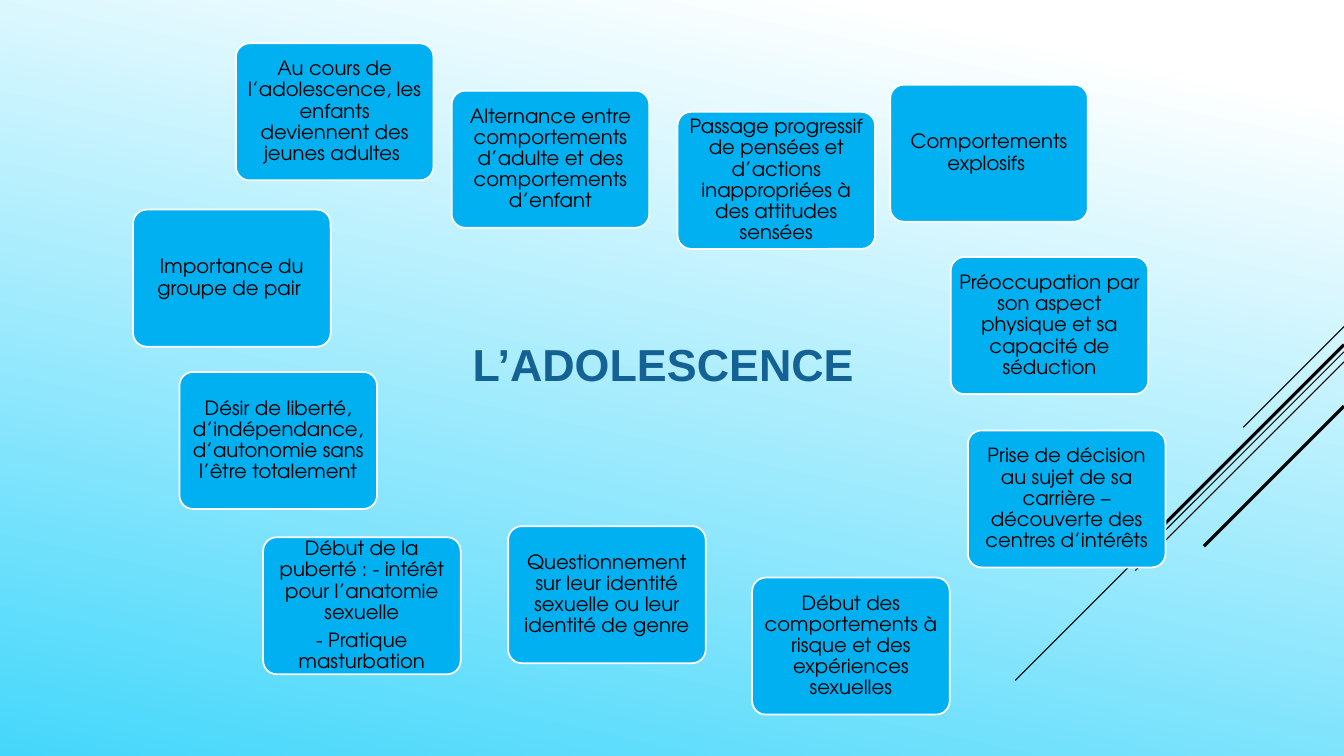
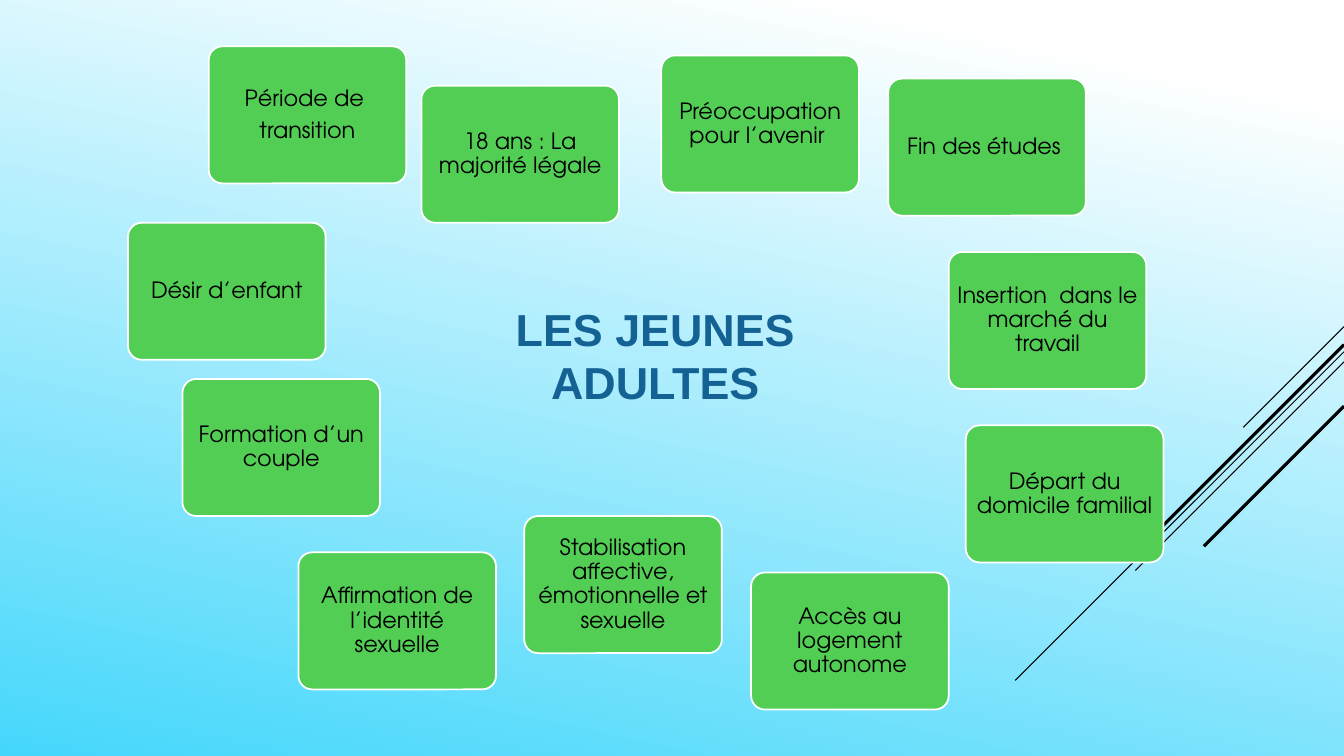
from lxml import etree
from pptx import Presentation
from pptx.dml.color import RGBColor
from pptx.enum.shapes import MSO_CONNECTOR, MSO_SHAPE
from pptx.enum.text import MSO_ANCHOR, PP_ALIGN
from pptx.oxml.ns import qn
from pptx.util import Inches, Pt

LINE = MSO_CONNECTOR.STRAIGHT
ROUND = MSO_SHAPE.ROUNDED_RECTANGLE
MIDDLE, TOP = MSO_ANCHOR.MIDDLE, MSO_ANCHOR.TOP
CENTER = PP_ALIGN.CENTER

COLORS = {
    "white": "FFFFFF",
    "sky": "45D7FB",
    "black": "000000",
    "title": "146194",
    "blue": "00B0F0",
    "green": "52CE55",
}
CARD_W, CARD_H = 1.96, 1.36
TITLE_W = 5.14
EDGE = 13.33

RAYS = [
    (3.24, 1, 0.75),
    (3.49, 3.26, 0.75),
    (3.59, 2.07, 0.75),
    (3.42, 1.91, 2.25),
    (4.03, 1.39, 2.25),
]

SLIDES = [
    {
        "title": "L’ADOLESCENCE", "place": (4.01, 3.29, 0.64),
        "fill": "blue", "size": 14,
        "cards": [
            (2.34, 0.43, "Au cours de l’adolescence, les enfants deviennent des jeunes adultes "),
            (4.48, 0.9, "Alternance entre comportements d’adulte et des comportements d’enfant"),
            (6.72, 1.11, "Passage progressif de pensées et d’actions inappropriées à des attitudes sensées"),
            (8.83, 0.84, "Comportements explosifs "),
            (9.43, 2.55, "Préoccupation par son aspect physique et sa capacité de séduction"),
            (9.6, 4.27, "Prise de décision au sujet de sa carrière –découverte des centres d’intérêts"),
            (7.46, 5.73, "Début des comportements à risque et des expériences sexuelles"),
            (5.04, 5.22, "Questionnement sur leur identité sexuelle ou leur identité de genre"),
            (2.61, 5.33, "Début de la puberté : - intérêt pour l’anatomie sexuelle\n- Pratique masturbation"),
            (1.78, 3.69, "Désir de liberté, d’indépendance, d’autonomie sans l’être totalement"),
            (1.32, 2.08, "Importance du groupe de pair "),
        ],
    },
    {
        "title": "LES JEUNES ADULTES", "place": (3.93, 2.94, 1.18),
        "fill": "green", "size": 16,
        "cards": [
            (2.07, 0.46, "Période de \ntransition"),
            (4.18, 0.85, "18 ans : La majorité légale"),
            (6.56, 0.55, "Préoccupation pour l’avenir "),
            (8.81, 0.78, "Fin des études "),
            (9.41, 2.5, "Insertion  dans le marché du travail"),
            (9.58, 4.22, "Départ du domicile familial"),
            (7.45, 5.68, "Accès au logement autonome"),
            (5.2, 5.12, "Stabilisation affective, émotionnelle et sexuelle"),
            (2.96, 5.48, "Affirmation de l’identité sexuelle"),
            (1.81, 3.76, "Formation d’un couple"),
            (1.27, 2.21, "Désir d’enfant"),
        ],
    },
]


def color(name):
    return RGBColor.from_string(COLORS[name])


def write(shape, text, size, font="TeX Gyre Adventor", ink="black", bold=False,
          anchor=MIDDLE, pad=(0.03, 0.03), lead=0.9, after=0):
    frame = shape.text_frame
    frame.word_wrap = True
    frame.vertical_anchor = anchor
    frame.margin_left = frame.margin_right = Inches(pad[0])
    frame.margin_top = frame.margin_bottom = Inches(pad[1])
    frame.text = text
    for para in frame.paragraphs:
        para.alignment = CENTER
        para.line_spacing = lead
        para.space_after = Pt(after)
        para.font.name = font
        para.font.size = Pt(size)
        para.font.bold = bold
        para.font.color.rgb = color(ink)


prs = Presentation()
prs.slide_width, prs.slide_height = Inches(EDGE), Inches(7.5)

back = prs.slide_master.background.fill
back.gradient()
back.gradient_angle = 258
for stop, (name, pos) in zip(back.gradient_stops, [("white", 0.1), ("sky", 1)]):
    stop.color.rgb = color(name)
    stop.position = pos

for page in SLIDES:
    slide = prs.slides.add_slide(prs.slide_layouts[6])
    shapes = slide.shapes

    for top, run, width in RAYS:
        ray = shapes.add_connector(LINE, Inches(EDGE), Inches(top),
                                   Inches(EDGE - run), Inches(top + run))
        ray.line.color.rgb = color("black")
        ray.line.width = Pt(width)
        etree.SubElement(ray._element.spPr, qn("a:effectLst"))

    for left, top, text in page["cards"]:
        card = shapes.add_shape(ROUND, Inches(left), Inches(top),
                                Inches(CARD_W), Inches(CARD_H))
        card.adjustments[0] = 0.1
        card.shadow.inherit = False
        card.fill.solid()
        card.fill.fore_color.rgb = color(page["fill"])
        card.line.color.rgb = color("white")
        card.line.width = Pt(1.25)
        write(card, text, page["size"], after=page["size"] * 0.35)

    left, top, high = page["place"]
    title = shapes.add_textbox(Inches(left), Inches(top), Inches(TITLE_W), Inches(high))
    write(title, page["title"], 32, font="Arial", ink="title", bold=True,
          anchor=TOP, pad=(0.1, 0.05), lead=1.0)

prs.save("out.pptx")
